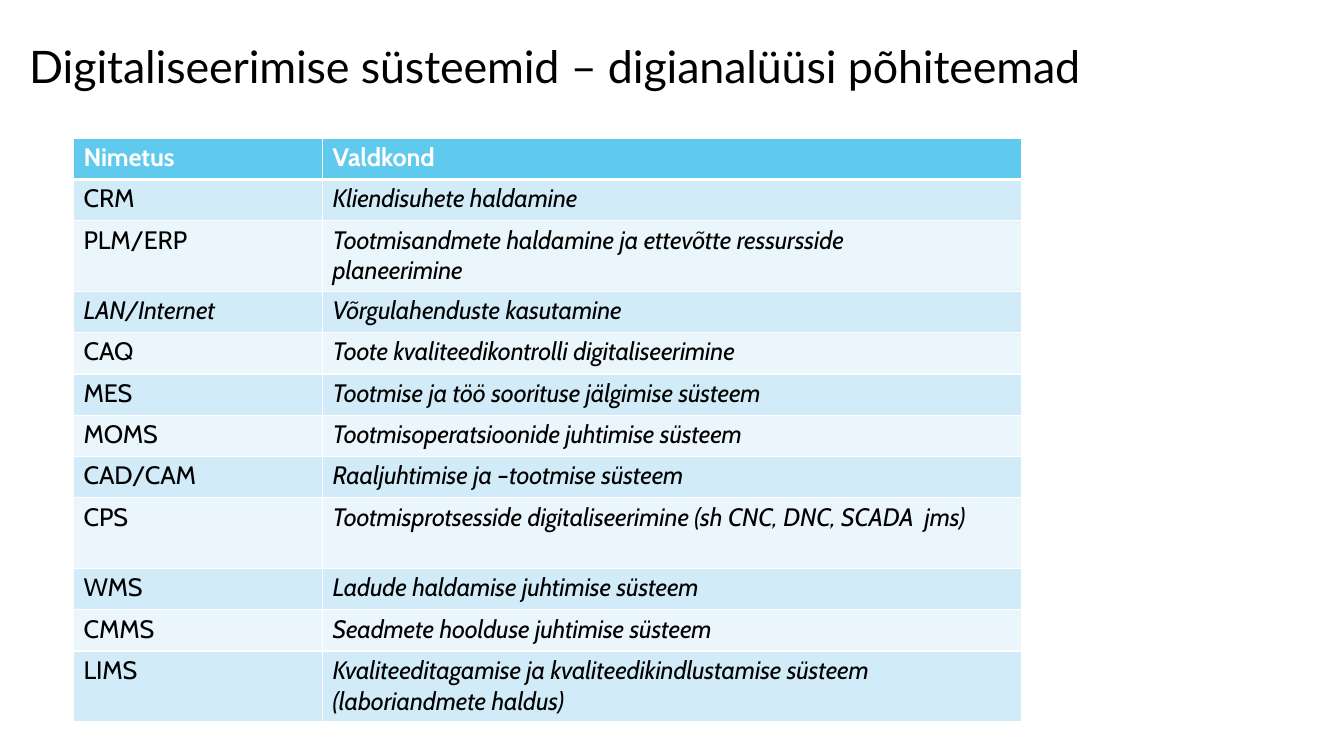
import pptx
import pptx.util
import pptx.dml.color
import pptx.enum.text
import pptx.oxml
import pptx.oxml.ns
from pptx.util import Inches

SYSTEMS = [
    ("Nimetus", "Valdkond"),
    ("CRM", "Kliendisuhete haldamine"),
    ("PLM/ERP", "Tootmisandmete haldamine ja ettevõtte ressursside\nplaneerimine"),
    ("LAN/Internet", "Võrgulahenduste kasutamine"),
    ("CAQ", "Toote kvaliteedikontrolli digitaliseerimine"),
    ("MES", "Tootmise ja töö soorituse jälgimise süsteem"),
    ("MOMS", "Tootmisoperatsioonide juhtimise süsteem"),
    ("CAD/CAM", "Raaljuhtimise ja –tootmise süsteem"),
    ("CPS", "Tootmisprotsesside digitaliseerimine (sh CNC, DNC, SCADA  jms)"),
    ("WMS", "Ladude haldamise juhtimise süsteem"),
    ("CMMS", "Seadmete hoolduse juhtimise süsteem"),
    ("LIMS", "Kvaliteeditagamise ja kvaliteedikindlustamise süsteem\n(laboriandmete haldus)"),
]
TALL_ROWS = {"PLM/ERP", "CPS", "LIMS"}
COLUMN_WIDTHS = [2.47, 6.93]
HEADER_FILL = "5FCAEE"
BAND_FILLS = ["EAF6FB", "D2EBF8"]


def color(value):
    return pptx.dml.color.RGBColor.from_string(value)


def add_text(para, text, text_color, formats):
    span = para.add_run()
    span.text = text
    span.font.color.rgb = color(text_color)
    for name, value in formats.items():
        setattr(span.font, name, value)
    span.font._element.set("spc", "-10")


deck = pptx.Presentation()
deck.slide_width = Inches(13.33)
deck.slide_height = Inches(7.5)
page = deck.slides.add_slide(deck.slide_layouts[6])

title = page.shapes.add_textbox(Inches(0.28), Inches(0.37), Inches(10.78), Inches(0.56))
title_format = {
    "word_wrap": True,
    "vertical_anchor": pptx.enum.text.MSO_ANCHOR.MIDDLE,
    "margin_left": Inches(0.01),
    "margin_top": Inches(0.01),
    "margin_right": 0,
    "margin_bottom": 0,
}
for name, value in title_format.items():
    setattr(title.text_frame, name, value)
title_para = title.text_frame.paragraphs[0]
title_para.space_before = pptx.util.Pt(1)
add_text(title_para, "Digitaliseerimise süsteemid – digianalüüsi põhiteemad", "000000",
         {"name": "Lato", "size": pptx.util.Pt(32)})

row_heights = [0.7 if system in TALL_ROWS else 0.41 for system, field in SYSTEMS]
table = page.shapes.add_table(
    len(SYSTEMS), len(COLUMN_WIDTHS), Inches(0.73), Inches(1.37),
    Inches(sum(COLUMN_WIDTHS)), Inches(sum(row_heights))).table
for column, width in zip(table.columns, COLUMN_WIDTHS):
    column.width = Inches(width)

for row_index, texts in enumerate(SYSTEMS):
    header = row_index == 0
    table.rows[row_index].height = Inches(row_heights[row_index])
    for column_index, text in enumerate(texts):
        cell = table.cell(row_index, column_index)
        cell_format = {
            "margin_left": Inches(0.1),
            "margin_top": Inches(0.04),
            "margin_right": 0,
            "margin_bottom": 0,
        }
        for name, value in cell_format.items():
            setattr(cell, name, value)

        border_widths = {"L": 1, "R": 1, "T": 3 if row_index == 1 else 1, "B": 3 if header else 1}
        for side, points in border_widths.items():
            cell._tc.get_or_add_tcPr().append(pptx.oxml.parse_xml(
                f'<a:ln{side} {pptx.oxml.ns.nsdecls("a")} w="{pptx.util.Pt(points)}">'
                '<a:solidFill><a:srgbClr val="FFFFFF"/></a:solidFill>'
                f'</a:ln{side}>'))
        cell.fill.solid()
        cell.fill.fore_color.rgb = color(HEADER_FILL if header else BAND_FILLS[row_index % 2])

        text_format = {
            "name": "Cabin",
            "size": pptx.util.Pt(18),
            "bold": header,
            "italic": not header and (column_index == 1 or text == "LAN/Internet"),
        }
        for line_index, line in enumerate(text.split("\n")):
            frame = cell.text_frame
            para = frame.add_paragraph() if line_index else frame.paragraphs[0]
            para.space_before = pptx.util.Pt(0 if line_index else 3.2)
            add_text(para, line, "FFFFFF" if header else "000000", text_format)

deck.save("out.pptx")
